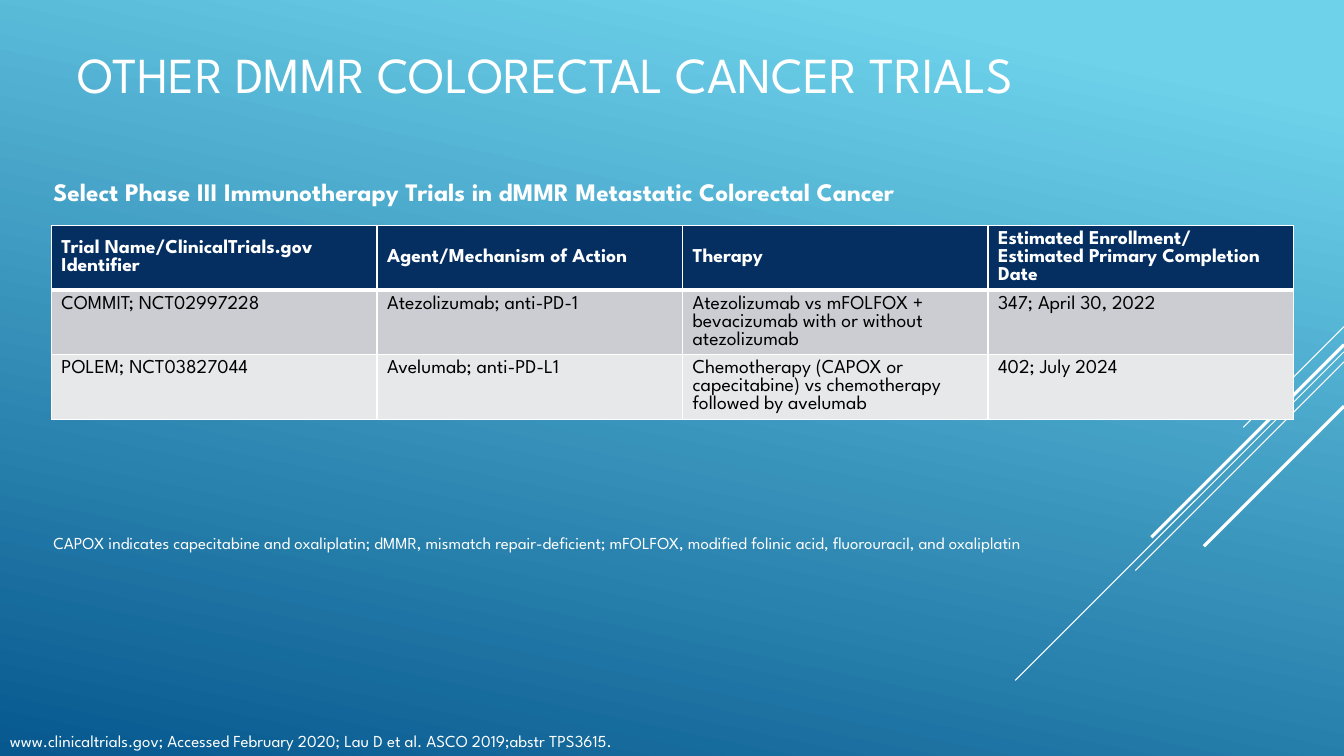
from pptx import Presentation, util as u
from pptx.dml.color import RGBColor
from pptx.enum import shapes, text
from pptx.oxml import parse_xml
from pptx.oxml.ns import nsdecls

# Content
TITLE = "OTHER DMMR COLORECTAL CANCER TRIALS"
SUBTITLE = "Select Phase III Immunotherapy Trials in dMMR Metastatic Colorectal Cancer"
TRIALS = [
    ("Trial Name/ClinicalTrials.gov Identifier", "Agent/Mechanism of Action", "Therapy",
     "Estimated Enrollment/\nEstimated Primary Completion Date"),
    ("COMMIT; NCT02997228", "Atezolizumab; anti-PD-1",
     "Atezolizumab vs mFOLFOX + bevacizumab with or without atezolizumab",
     "347; April 30, 2022"),
    ("POLEM; NCT03827044", "Avelumab; anti-PD-L1",
     "Chemotherapy (CAPOX or capecitabine) vs chemotherapy followed by avelumab",
     "402; July 2024"),
]
ABBREVIATIONS = ("CAPOX indicates capecitabine and oxaliplatin; dMMR, mismatch repair-deficient; "
                 "mFOLFOX, modified folinic acid, fluorouracil, and oxaliplatin")
SOURCE = ("www.clinicaltrials.gov; Accessed February 2020; "
          "Lau D et al. ASCO 2019;abstr TPS3615.")

# Style and layout, in inches and points
FONT = "League Spartan"
COLORS = {"white": "FFFFFF", "black": "000000", "sky": "6ED2EB", "deep": "06588E",
          "header": "052F61", "odd": "CCCDD2", "even": "E7E8EA"}
WIDTH, HEIGHT = 13.33, 7.5
TABLE_LEFT, TABLE_TOP, ROW_HEIGHT = 0.51, 2.24, 0.64
COLUMNS = [3.23, 3.03, 3.03, 3.03]
# Diagonals from the right edge: start height, run, line width
DIAGONALS = [(3.24, 1.0, 0.75), (3.49, 3.26, 0.75), (3.59, 2.07, 0.75),
             (3.42, 1.91, 2.25), (4.03, 1.39, 2.25)]


def rgb(name):
    return RGBColor.from_string(COLORS[name])


def write(tf, content, size, color="white", bold=False):
    p = tf.paragraphs[0]
    p.alignment = text.PP_ALIGN.LEFT
    for i, line in enumerate(content.split("\n")):
        if i:
            p.add_line_break()
        r = p.add_run()
        r.text = line
        r.font.name, r.font.size, r.font.bold = FONT, u.Pt(size), bold
        r.font.color.rgb = rgb(color)


def add_label(s, box, content, size, bold=False, wrap=True, anchor=text.MSO_ANCHOR.TOP):
    tf = s.shapes.add_textbox(*map(u.Inches, box)).text_frame
    tf.word_wrap, tf.vertical_anchor = wrap, anchor
    write(tf, content, size, bold=bold)


def set_borders(cell, top, bottom):
    for side, width in (("L", 1), ("R", 1), ("T", top), ("B", bottom)):
        cell._tc.get_or_add_tcPr().append(parse_xml(
            f'<a:ln{side} {nsdecls("a")} w="{u.Pt(width)}"><a:solidFill>'
            f'<a:srgbClr val="{COLORS["white"]}"/></a:solidFill></a:ln{side}>'))


def main():
    prs = Presentation()
    prs.slide_width, prs.slide_height = u.Inches(WIDTH), u.Inches(HEIGHT)
    s = prs.slides.add_slide(prs.slide_layouts[5])

    # Background
    fill = s.background.fill
    fill.gradient()
    fill.gradient_angle = 360 - 102
    for stop, position, name in zip(fill.gradient_stops, (0.1, 1), ("sky", "deep")):
        stop.position, stop.color.rgb = position, rgb(name)

    # Diagonal lines
    for y, run, width in DIAGONALS:
        line = s.shapes.add_connector(
            shapes.MSO_CONNECTOR.STRAIGHT,
            *map(u.Inches, (WIDTH, y, WIDTH - run, y + run)))
        line.line.color.rgb, line.line.width = rgb("white"), u.Pt(width)
        line._element.spPr.append(parse_xml(f'<a:effectLst {nsdecls("a")}/>'))

    # Title
    title = s.shapes.title
    title.left, title.top, title.width, title.height = map(u.Inches, (0.67, 0, 12, 1.46))
    tf = title.text_frame
    tf.auto_size, tf.vertical_anchor = text.MSO_AUTO_SIZE.NONE, text.MSO_ANCHOR.MIDDLE
    write(tf, TITLE, 36)

    # Trials table
    table = s.shapes.add_table(
        len(TRIALS), len(COLUMNS),
        *map(u.Inches, (TABLE_LEFT, TABLE_TOP, sum(COLUMNS), ROW_HEIGHT * len(TRIALS)))).table
    for column, width in zip(table.columns, COLUMNS):
        column.width = u.Inches(width)
    for i, trial in enumerate(TRIALS):
        header = i == 0
        for j, content in enumerate(trial):
            cell = table.cell(i, j)
            set_borders(cell, 3 if i == 1 else 1, 3 if header else 1)
            cell.fill.solid()
            cell.fill.fore_color.rgb = rgb(("header", "odd", "even")[i])
            cell.vertical_anchor = text.MSO_ANCHOR.MIDDLE if header else text.MSO_ANCHOR.TOP
            write(cell.text_frame, content, 14, "white" if header else "black", header)

    # Heading, abbreviations and source
    add_label(s, (0.43, 1.7, 9.48, 0.4), SUBTITLE, 18, bold=True, wrap=False)
    add_label(s, (0.43, 5.24, 9.99, 0.5), ABBREVIATIONS, 12)
    add_label(s, (0, 7, 10.2, 0.5), SOURCE, 12, anchor=text.MSO_ANCHOR.BOTTOM)

    prs.save("out.pptx")


if __name__ == "__main__":
    main()
